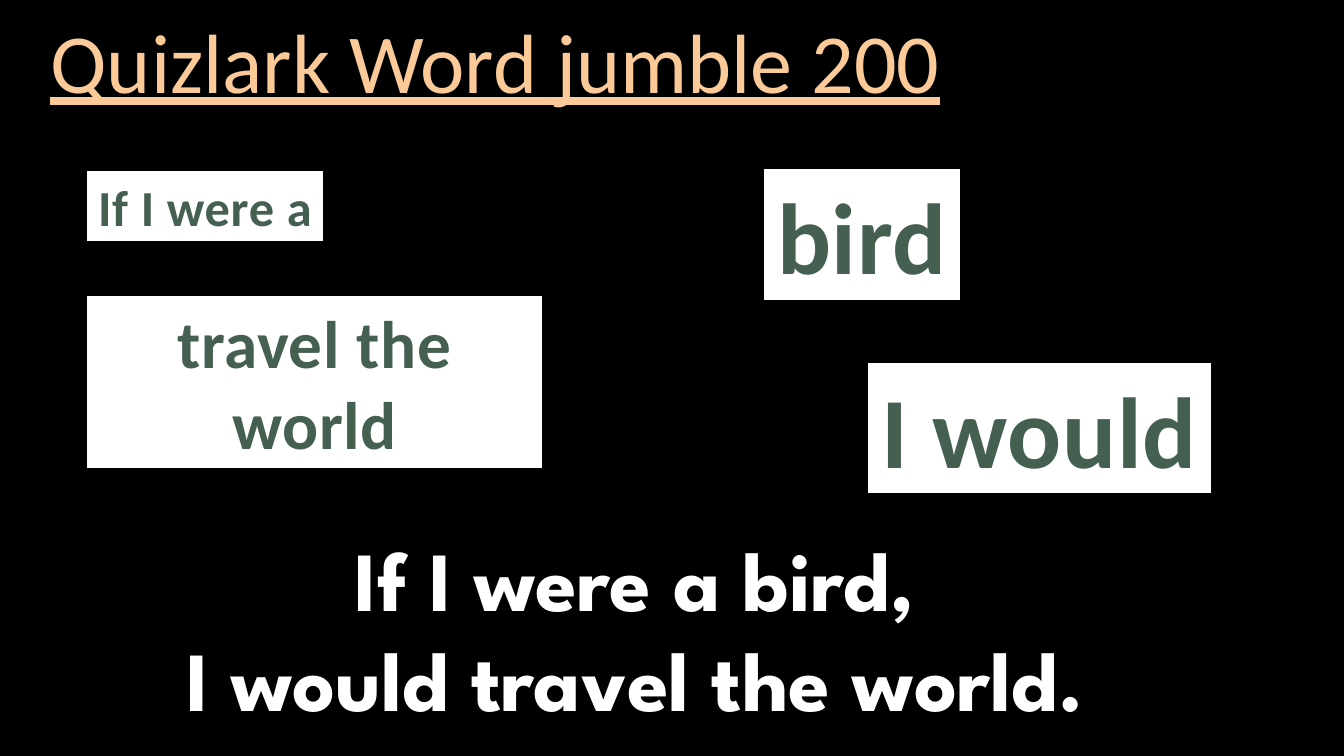
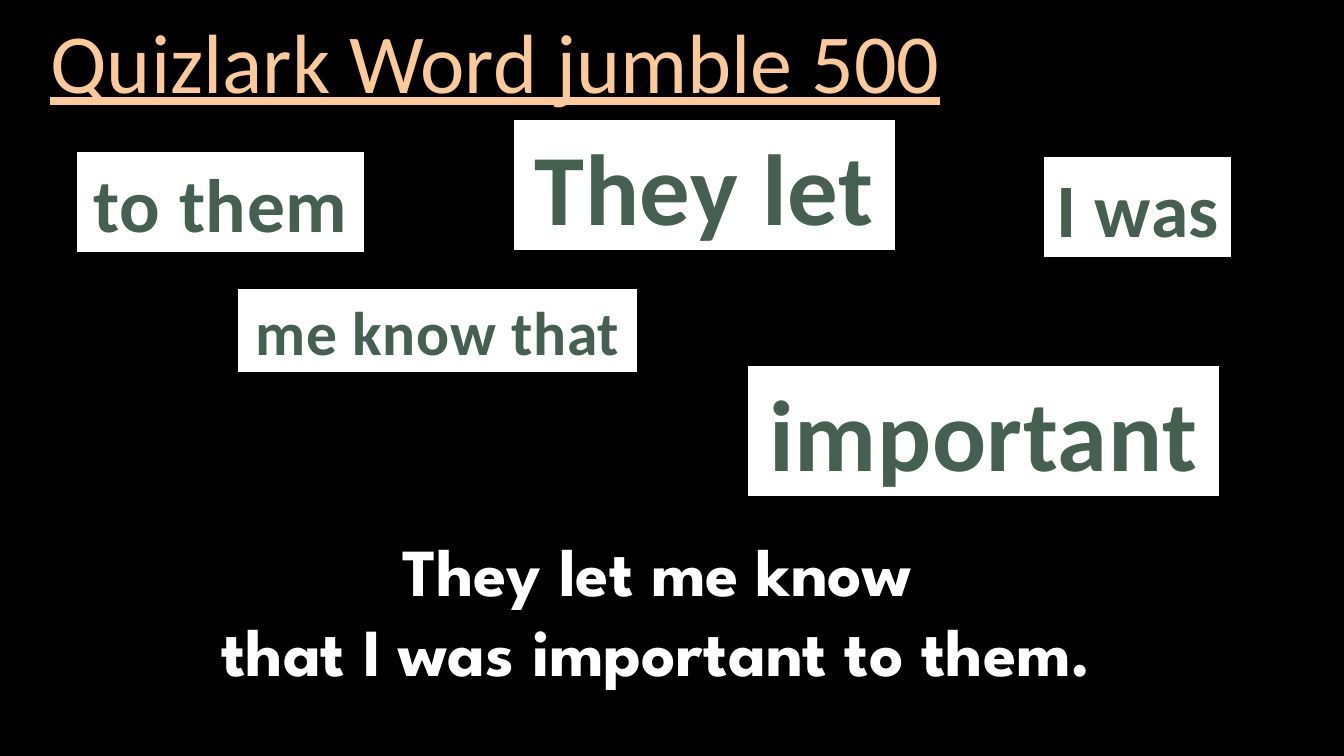
from pptx import Presentation
from pptx.dml.color import RGBColor
from pptx.enum.shapes import MSO_SHAPE
from pptx.enum.text import MSO_ANCHOR, MSO_AUTO_SIZE, PP_ALIGN
from pptx.util import Inches, Pt

RECTANGLE = MSO_SHAPE.RECTANGLE
MIDDLE = MSO_ANCHOR.MIDDLE
TOP = MSO_ANCHOR.TOP
NO_RESIZE = MSO_AUTO_SIZE.NONE
LEFT, CENTER = PP_ALIGN.LEFT, PP_ALIGN.CENTER

BLACK = RGBColor(0x00, 0x00, 0x00)
WHITE = RGBColor(0xFF, 0xFF, 0xFF)
PEACH = RGBColor(0xFB, 0xCA, 0x98)
GREEN = RGBColor(0x45, 0x5F, 0x51)
BODY_FONT = "Calibri"
ANSWER_FONT = "League Spartan"
TITLE_ONLY = 5

ROUNDS = [
    {
        "title": "Quizlark Word jumble 200",
        "tiles": [
            ("bird", 72, (7.57, 1.67, 1.96, 1.31)),
            ("travel the world", 48, (0.86, 2.93, 4.52, 1.72)),
            ("I would", 72, (8.6, 3.59, 3.42, 1.31)),
            ("If I were a", 36, (0.86, 1.69, 2.35, 0.71)),
        ],
        "answer": ["If I were a bird,", "I would travel the world."],
        "answer_size": 60,
        "answer_place": (1.23, 5.18, 10.14, 2.12),
    },
    {
        "title": "Quizlark Word jumble 500",
        "tiles": [
            ("to them", 54, (0.76, 1.5, 2.86, 1.01)),
            ("They let", 72, (5.09, 1.18, 3.79, 1.31)),
            ("I was", 54, (10.35, 1.55, 1.87, 1.01)),
            ("important", 72, (7.41, 3.62, 4.69, 1.31)),
            ("me know that", 44, (2.35, 2.86, 3.98, 0.84)),
        ],
        "answer": ["They let me know", "that I was important to them."],
        "answer_size": 48,
        "answer_place": (1.77, 5.2, 9.49, 1.72),
    },
]
WRAPPED_TILES = {"travel the world"}


def write_text(shape, lines, size, color, font=BODY_FONT, align=CENTER, anchor=MIDDLE,
               bold=False, underline=False, wrap=False, tracking=None, line_spacing=None):
    frame = shape.text_frame
    frame.auto_size = NO_RESIZE
    frame.word_wrap = wrap
    frame.vertical_anchor = anchor
    for index, line in enumerate(lines):
        para = frame.add_paragraph() if index else frame.paragraphs[0]
        para.alignment = align
        para.line_spacing = line_spacing
        span = para.add_run()
        span.text = line
        span.font.name = font
        span.font.size = Pt(size)
        span.font.bold = bold
        span.font.underline = underline
        span.font.color.rgb = color
        if tracking:
            span._r.get_or_add_rPr().set("spc", str(int(tracking * 100)))


def add_tile(page, text, size, place):
    tile = page.shapes.add_shape(RECTANGLE, *map(Inches, place))
    tile.shadow.inherit = False
    tile.fill.solid()
    tile.fill.fore_color.rgb = WHITE
    tile.line.color.rgb = BLACK
    tile.line.width = Pt(1)
    write_text(tile, [text], size, GREEN, bold=True, tracking=0.5,
               wrap=text in WRAPPED_TILES)


def prepare_layout(deck):
    fill = deck.slide_master.background.fill
    fill.solid()
    fill.fore_color.rgb = BLACK
    layout = deck.slide_layouts[TITLE_ONLY]
    title = layout.placeholders[0]
    title.left, title.top, title.width, title.height = map(Inches, (0.4, 0.16, 11.39, 0.99))
    return layout


def add_round(deck, layout, content):
    page = deck.slides.add_slide(layout)
    write_text(page.shapes.title, [content["title"]], 60, PEACH, align=LEFT,
               underline=True, wrap=True, line_spacing=0.9)
    for tile in content["tiles"]:
        add_tile(page, *tile)
    answer = page.shapes.add_textbox(*map(Inches, content["answer_place"]))
    write_text(answer, content["answer"], content["answer_size"], WHITE,
               font=ANSWER_FONT, anchor=TOP, bold=True)


def main():
    deck = Presentation()
    deck.slide_width, deck.slide_height = Inches(13.33), Inches(7.5)
    layout = prepare_layout(deck)
    for content in ROUNDS:
        add_round(deck, layout, content)
    deck.save("out.pptx")


if __name__ == "__main__":
    main()
